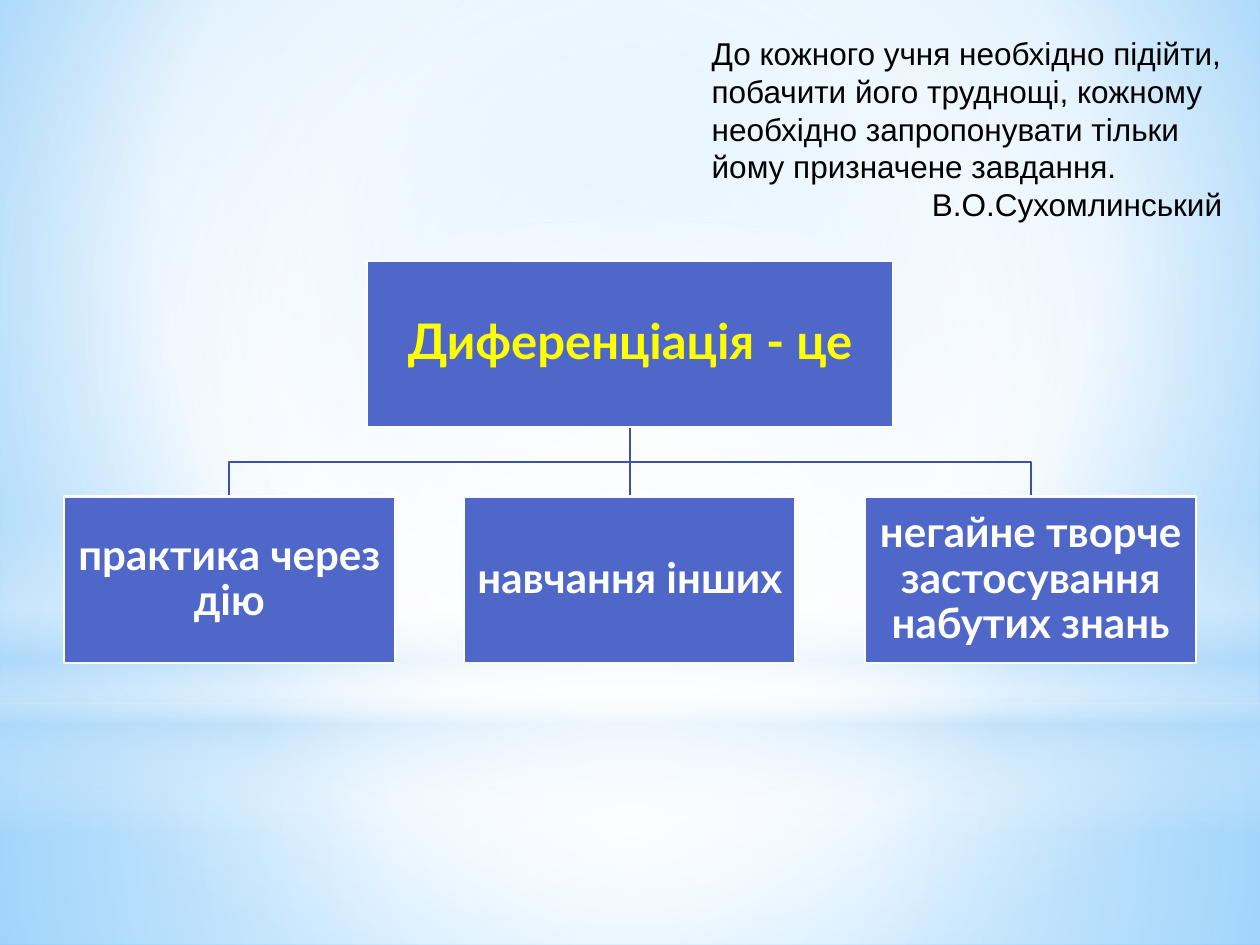
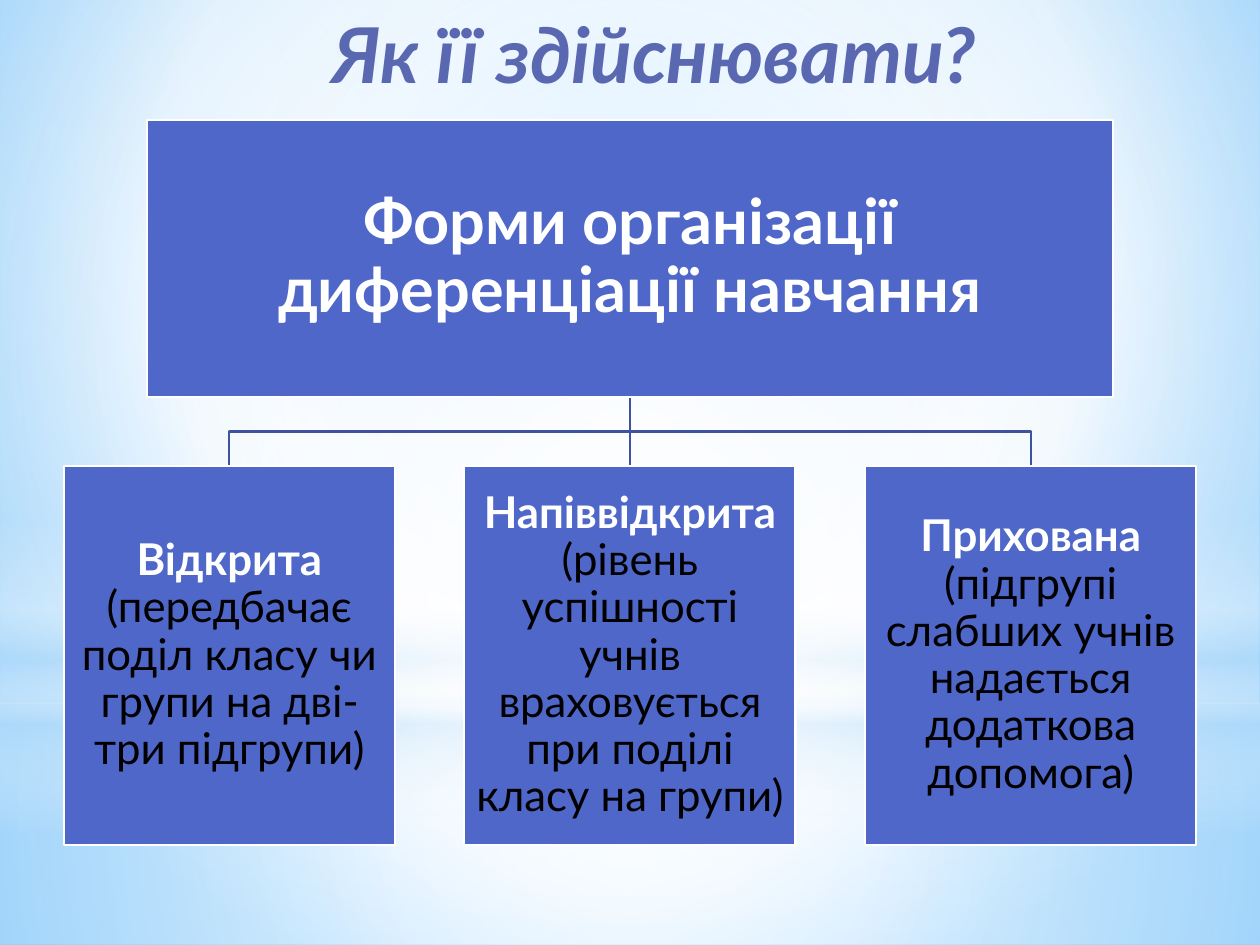
from lxml import etree
from pptx import Presentation
from pptx.dml.color import RGBColor
from pptx.enum.shapes import MSO_CONNECTOR, MSO_SHAPE
from pptx.enum.text import MSO_ANCHOR, MSO_AUTO_SIZE, PP_ALIGN
from pptx.oxml.ns import qn
from pptx.util import Inches, Pt

RECTANGLE, OVAL = MSO_SHAPE.RECTANGLE, MSO_SHAPE.OVAL
STRAIGHT = MSO_CONNECTOR.STRAIGHT
TOP, MIDDLE = MSO_ANCHOR.TOP, MSO_ANCHOR.MIDDLE
LEFT, CENTER, RIGHT = PP_ALIGN.LEFT, PP_ALIGN.CENTER, PP_ALIGN.RIGHT
NO_AUTOFIT = MSO_AUTO_SIZE.NONE

COLORS = {
    "box": "4E67C8",
    "branch": "3E52A0",
    "title": "5968B0",
    "accent": "FFFF00",
    "white": "FFFFFF",
    "black": "000000",
    "haze": "B4DCFA",
    "sky": "9ED5FF",
    "deep_sky": "5BB9FF",
}
HEADING_FONT, QUOTE_FONT = "Lato", "Arial"
LINE_WIDTH = Pt(1.25)
CENTER_X = 5
CHILD_WIDTH, CHILD_STEP = 2.63, 3.18
LEVEL_GAP = 0.55


def paint_gradient(fill, owner, stops, focus=None):
    fill.gradient()
    gradient = owner.find(".//" + qn("a:gradFill"))
    for part in list(gradient):
        gradient.remove(part)
    stop_list = etree.SubElement(gradient, qn("a:gsLst"))
    for position, color, opacity in stops:
        stop = etree.SubElement(stop_list, qn("a:gs"), pos=str(position * 1000))
        rgb = etree.SubElement(stop, qn("a:srgbClr"), val=COLORS[color])
        if opacity < 100:
            etree.SubElement(rgb, qn("a:alpha"), val=str(opacity * 1000))
    if focus:
        circle = etree.SubElement(gradient, qn("a:path"), path="circle")
        edges = {side: str(share * 1000) for side, share in zip("ltrb", focus)}
        etree.SubElement(circle, qn("a:fillToRect"), **edges)
    else:
        etree.SubElement(gradient, qn("a:lin"), ang="5400000", scaled="0")


def style_run(run, size, color, font=HEADING_FONT, bold=False, italic=False):
    run.font.name = font
    run.font.size = Pt(size)
    run.font.bold = bold
    run.font.italic = italic
    run.font.color.rgb = RGBColor.from_string(COLORS[color])


prs = Presentation()
prs.slide_width, prs.slide_height = Inches(10), Inches(7.5)
title_only, blank = prs.slide_layouts[5], prs.slide_layouts[6]
definition_slide = prs.slides.add_slide(blank)
forms_slide = prs.slides.add_slide(title_only)

master = prs.slide_master
paint_gradient(
    master.background.fill, master.element,
    [(0, "sky", 100), (60, "white", 100), (100, "deep_sky", 100)], (20, 10, 20, 60),
)
middle_focus = (50, 50, 50, 50)
glows = [
    (RECTANGLE, 0, 5.58, 1.92, middle_focus,
     [(0, "white", 91), (37, "white", 76), (100, "haze", 79)]),
    (RECTANGLE, 0, 0, 5.58, middle_focus,
     [(0, "white", 89), (48, "white", 62), (100, "haze", 79)]),
    (RECTANGLE, 0, 4.12, 2.5, None,
     [(0, "white", 0), (29, "white", 30), (45, "haze", 40),
      (55, "white", 26), (65, "haze", 60), (100, "white", 0)]),
    (OVAL, 0, 1.75, 5.58, middle_focus, [(0, "white", 100), (56, "white", 0)]),
]
for order, (outline, left, top, height, focus, stops) in enumerate(glows):
    glow = definition_slide.shapes.add_shape(
        outline, Inches(left), Inches(top), prs.slide_width, Inches(height))
    glow.shadow.inherit = False
    glow.line.fill.background()
    paint_gradient(glow.fill, glow.element, stops, focus)
    glow.element.nvSpPr.cNvPr.set("id", str(20 + order))
    master.shapes.element.insert(2 + order, glow.element)

trees = [
    (definition_slide, 2.07, 4.17, 1.32, 1.32, 24,
     ("Диференціація - це", 28, "accent"),
     [("практика через дію", ""),
      ("навчання інших", ""),
      ("негайне творче застосування набутих знань", "")]),
    (forms_slide, 0.95, 7.67, 2.2, 3.01, 25,
     ("Форми організації диференціації навчання", 36, "white"),
     [("Відкрита ", "(передбачає поділ класу чи групи на дві-три підгрупи)"),
      ("Напіввідкрита ",
       "(рівень успішності учнів враховується при поділі класу на групи)"),
      ("Прихована ", "(підгрупі слабших учнів надається додаткова допомога)")]),
]
for slide, root_top, root_width, root_height, child_height, child_size, root, children in trees:
    root_bottom = root_top + root_height
    child_top = root_bottom + LEVEL_GAP
    root_text, root_size, root_color = root
    boxes = [(CENTER_X, root_top, root_width, root_height, root_size, root_color, root_text, "")]

    for column, (name, detail) in enumerate(children):
        child_x = CENTER_X + (column - 1) * CHILD_STEP
        boxes.append((child_x, child_top, CHILD_WIDTH, child_height,
                      child_size, "white", name, detail))
        if child_x == CENTER_X:
            branch = slide.shapes.add_connector(
                STRAIGHT, Inches(CENTER_X), Inches(root_bottom),
                Inches(CENTER_X), Inches(child_top))
        else:
            bend = root_bottom + LEVEL_GAP / 2
            route = slide.shapes.build_freeform(Inches(CENTER_X), Inches(root_bottom))
            route.add_line_segments(
                [(Inches(x), Inches(y)) for x, y in
                 [(CENTER_X, bend), (child_x, bend), (child_x, child_top)]],
                close=False)
            branch = route.convert_to_shape()
            branch.fill.background()
        branch.line.color.rgb = RGBColor.from_string(COLORS["branch"])
        branch.line.width = LINE_WIDTH
        etree.SubElement(branch.element.spPr, qn("a:effectLst"))

    for center, top, width, height, size, color, name, detail in boxes:
        box = slide.shapes.add_shape(
            RECTANGLE, Inches(center - width / 2), Inches(top), Inches(width), Inches(height))
        box.shadow.inherit = False
        box.fill.solid()
        box.fill.fore_color.rgb = RGBColor.from_string(COLORS["box"])
        box.line.color.rgb = RGBColor.from_string(COLORS["white"])
        box.line.width = LINE_WIDTH
        frame = box.text_frame
        frame.word_wrap = True
        frame.vertical_anchor = MIDDLE
        frame.margin_left = frame.margin_right = Inches(0.02)
        frame.margin_top = frame.margin_bottom = Inches(0.02)
        paragraph = frame.paragraphs[0]
        paragraph.text = name
        paragraph.alignment = CENTER
        paragraph.line_spacing = 0.9
        style_run(paragraph.runs[0], size, color, bold=True)
        if detail:
            detail_run = paragraph.add_run()
            detail_run.text = detail
            style_run(detail_run, size, "black")

quote = definition_slide.shapes.add_textbox(
    Inches(5.55), Inches(0.21), Inches(4.25), Inches(1.62)).text_frame
quote.word_wrap = True
quote.vertical_anchor = MIDDLE
quote.text = "\n".join([
    "До кожного учня необхідно підійти,",
    "побачити його труднощі, кожному",
    "необхідно запропонувати тільки",
    "йому призначене завдання.",
    "В.О.Сухомлинський",
])
for line in quote.paragraphs:
    line.alignment = LEFT
    style_run(line.runs[0], 18, "black", font=QUOTE_FONT)
quote.paragraphs[-1].alignment = RIGHT

title = forms_slide.shapes.title
title.left, title.top = Inches(0.59), Inches(0)
title.width, title.height = Inches(9.21), Inches(0.84)
title.text_frame.text = "Як її здійснювати?"
title.text_frame.auto_size = NO_AUTOFIT
title.text_frame.vertical_anchor = TOP
title.text_frame.paragraphs[0].alignment = CENTER
style_run(title.text_frame.paragraphs[0].runs[0], 44, "title", bold=True, italic=True)

prs.save("out.pptx")
